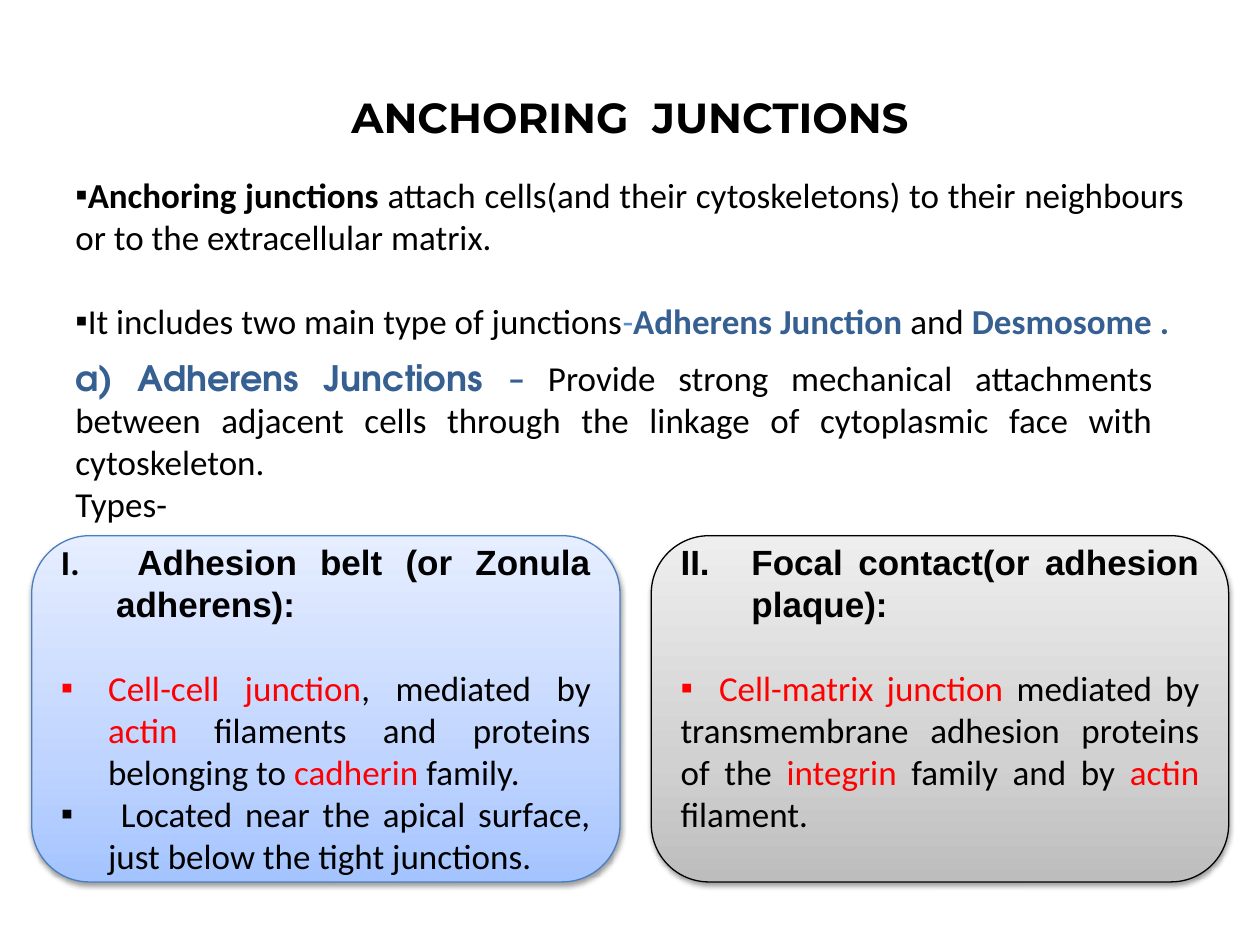
from dataclasses import dataclass

from lxml import etree
from pptx import Presentation
from pptx.dml.color import RGBColor
from pptx.enum.shapes import MSO_SHAPE
from pptx.enum.text import MSO_ANCHOR, PP_ALIGN
from pptx.oxml.ns import qn
from pptx.util import Cm, Pt

ROUNDED = MSO_SHAPE.ROUNDED_RECTANGLE
TOP, MIDDLE = MSO_ANCHOR.TOP, MSO_ANCHOR.MIDDLE
CENTER, JUSTIFY = PP_ALIGN.CENTER, PP_ALIGN.JUSTIFY


@dataclass(frozen=True)
class Theme:
    ink: str = "000000"
    accent: str = "376092"
    dash: str = "558ED5"
    key: str = "FF0000"
    blue_edge: str = "4B7EBC"
    blue_fill: tuple = ("A4C4FF", "BFD4FF", "E6EEFF")
    grey_fill: tuple = ("BDBDBD", "D1D1D1", "EEEEEE")
    body: str = "Calibri"
    label: str = "Arial"
    heading: str = "Montserrat"
    term: str = "TeX Gyre Adventor"
    title_size: int = 24
    body_size: int = 20
    gap: int = 24


THEME = Theme()


def add_child(parent, tag, **attributes):
    child = etree.SubElement(parent, qn(tag))
    for name, value in attributes.items():
        child.set(name, str(value))
    return child


def add_span(para, text, color=THEME.ink, bold=False, font=THEME.body, size=THEME.body_size):
    span = para.add_run()
    span.text = text
    span.font.name, span.font.size, span.font.bold = font, Pt(size), bold
    span.font.color.rgb = RGBColor.from_string(color)


def add_para(frame, spans, align=JUSTIFY, hang=0, bullet=None, number=None, after=0):
    """Append a paragraph; hang is its hanging indent in cm, number a Roman numeral."""
    first = frame.paragraphs[0]
    para = frame.add_paragraph() if first.runs else first
    para.alignment = align
    para.space_before, para.space_after = Pt(0), Pt(after)
    properties = para._p.get_or_add_pPr()
    properties.set("marL", str(Cm(hang)))
    properties.set("indent", str(-Cm(hang)))
    if bullet:
        add_child(properties, "a:buFont", typeface=THEME.label)
        add_child(properties, "a:buChar", char=bullet)
    elif number:
        add_child(properties, "a:buFont", typeface="+mj-lt")
        add_child(properties, "a:buAutoNum", type="romanUcPeriod", startAt=number)
    for text, *style in spans:
        add_span(para, text, *style)


def add_text(page, box, anchor):
    frame = page.shapes.add_textbox(*map(Cm, box)).text_frame
    frame.word_wrap = True
    frame.vertical_anchor = anchor
    return frame


def add_title(page, box):
    frame = add_text(page, box, MIDDLE)
    title = ("ANCHORING  JUNCTIONS", THEME.ink, True, THEME.heading, THEME.title_size)
    add_para(frame, [title], align=CENTER)


def add_overview(page, box):
    frame = add_text(page, box, TOP)
    add_para(frame, [
        ("Anchoring junctions ", THEME.ink, True),
        ("attach cells(and their cytoskeletons) to their neighbours "
         "or to the extracellular matrix.",),
    ], bullet="▪", after=THEME.gap)
    add_para(frame, [
        ("It includes two main type of junctions",),
        ("-", THEME.dash),
        ("Adherens Junction ", THEME.accent, True),
        ("and ",),
        ("Desmosome .", THEME.accent, True),
    ], bullet="▪")


def add_definition(page, box):
    frame = add_text(page, box, MIDDLE)
    add_para(frame, [
        ("a) Adherens Junctions ", THEME.accent, True, THEME.term),
        ("– ", THEME.accent, True),
        ("Provide strong mechanical attachments between adjacent cells "
         "through the linkage of cytoplasmic face with cytoskeleton.",),
    ])
    add_para(frame, [("Types-",)])


def add_card(page, box, colors, edge):
    """Draw a rounded card shaded from bottom to top and return its text frame."""
    card = page.shapes.add_shape(ROUNDED, *map(Cm, box))
    card.fill.gradient()
    card.fill.gradient_angle = 90
    properties = card._element.spPr
    stops = properties.find(".//" + qn("a:gsLst"))
    stops.clear()
    for position, color in zip((0, 35, 100), colors):
        stop = add_child(stops, "a:gs", pos=position * 1000)
        add_child(stop, "a:srgbClr", val=color)
    card.line.color.rgb = RGBColor.from_string(edge)
    card.line.width = Pt(0.75)

    card.shadow.inherit = False
    shadow = add_child(properties.find(qn("a:effectLst")), "a:outerShdw",
                       blurRad=Pt(3.1), dist=Pt(1.6), dir=90 * 60000, rotWithShape=0)
    shade = add_child(shadow, "a:srgbClr", val=THEME.ink)
    add_child(shade, "a:alpha", val=38000)

    frame = card.text_frame
    frame.word_wrap = True
    frame.vertical_anchor = MIDDLE
    return frame


def add_belt_card(page, box):
    frame = add_card(page, box, THEME.blue_fill, THEME.blue_edge)
    add_para(frame, [
        (" ", THEME.ink, True),
        ("Adhesion belt (or Zonula adherens):", THEME.ink, True, THEME.label),
    ], hang=1.11, number=1, after=THEME.gap)
    add_para(frame, [
        ("Cell-cell junction", THEME.key),
        (", mediated by ",),
        ("actin ", THEME.key),
        ("filaments and proteins belonging to ",),
        ("cadherin", THEME.key),
        (" family. ",),
    ], hang=0.95, bullet="▪")
    add_para(frame, [
        (" Located near the apical surface, just below the tight junctions.",),
    ], hang=0.95, bullet="▪")


def add_contact_card(page, box):
    frame = add_card(page, box, THEME.grey_fill, THEME.ink)
    frame.margin_bottom = Cm(0.97)
    add_para(frame, [
        ("Focal contact(or adhesion plaque):", THEME.ink, True, THEME.label),
    ], hang=1.43, number=2, after=THEME.gap)
    add_para(frame, [
        ("  Cell-matrix junction ", THEME.key),
        ("mediated by transmembrane adhesion proteins of the ",),
        ("integrin", THEME.key),
        (" family and by ",),
        ("actin ", THEME.key),
        ("filament.",),
    ], bullet="▪")


def main():
    deck = Presentation()
    deck.slide_width, deck.slide_height = Cm(25.4), Cm(19.05)
    page = deck.slides.add_slide(deck.slide_layouts[6])
    left, card_top, card_height = 1.27, 10.8, 6.98
    add_title(page, (left, 0.76, 22.86, 3.18))
    add_overview(page, (left, 3.38, 22.86, 5.38))
    add_definition(page, (left, 7.19, 22.22, 3.38))
    add_belt_card(page, (0.64, card_top, 11.86, card_height))
    add_contact_card(page, (13.13, card_top, 11.64, card_height))
    deck.save("out.pptx")


if __name__ == "__main__":
    main()
